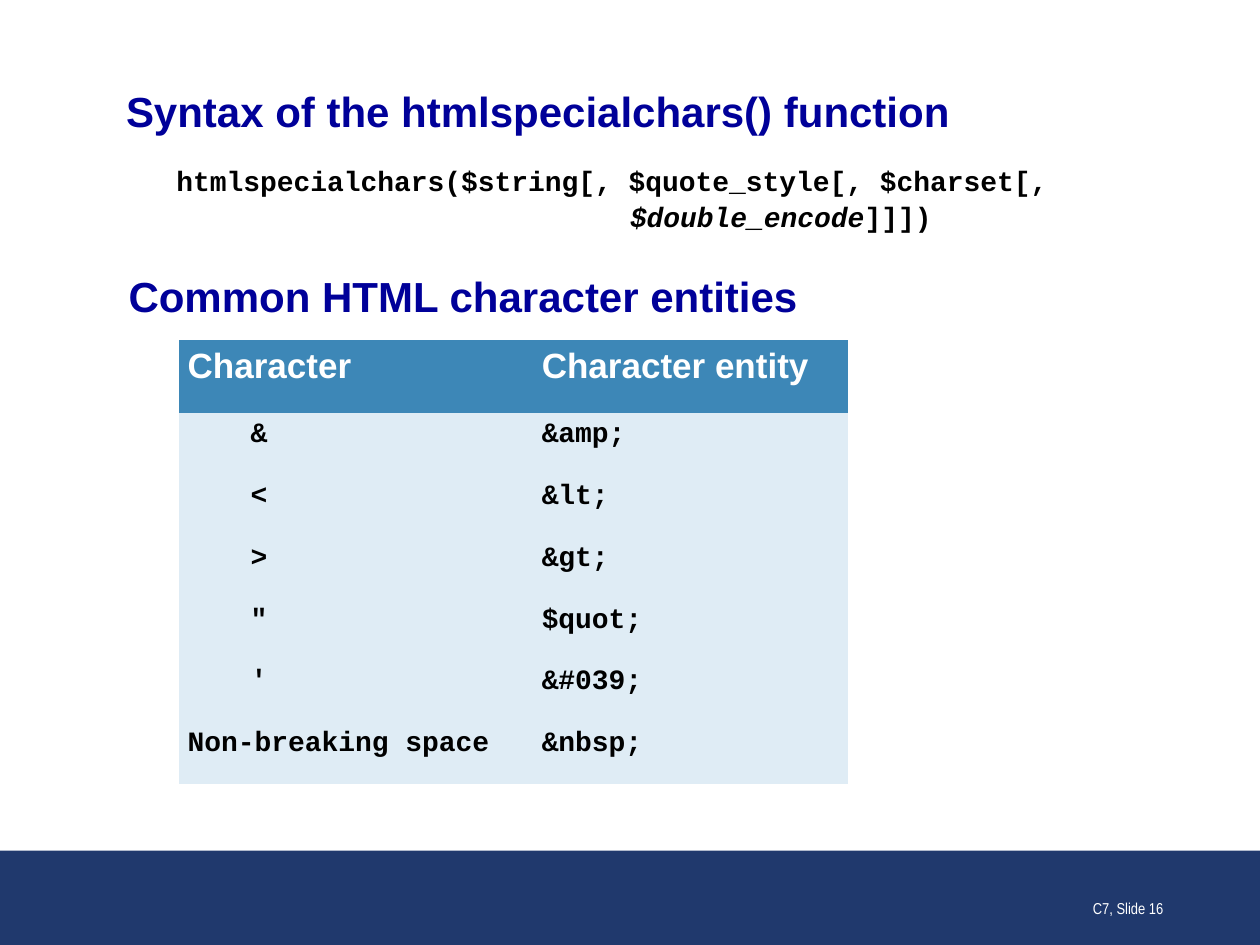
from lxml import etree
from pptx import Presentation
from pptx.dml.color import RGBColor
from pptx.enum.shapes import MSO_SHAPE
from pptx.enum.text import MSO_ANCHOR, MSO_AUTO_SIZE, PP_ALIGN
from pptx.oxml.ns import qn
from pptx.util import Inches, Pt

RECT = MSO_SHAPE.RECTANGLE
MIDDLE, BOTTOM = MSO_ANCHOR.MIDDLE, MSO_ANCHOR.BOTTOM
LEFT, RIGHT = PP_ALIGN.LEFT, PP_ALIGN.RIGHT
NO_FIT = MSO_AUTO_SIZE.NONE
NO_STYLE = "{2D5ABB26-0587-4C30-8999-92F81FD0307C}"
NAVY, BLUE, HEADER, PALE = "20396D", "000099", "3D87B7", "DFECF5"
WHITE, BLACK = "FFFFFF", "000000"
HEADING = ("Arial", 24, BLUE, True)
CODE = ("Courier New", 16, BLACK, True)
TABLE_HEAD = ("Arial", 20, WHITE, True)
FOOTER = ("Arial Narrow", 9, WHITE, False)


def rgb(value):
    """Turn a hex string into a colour."""
    return RGBColor.from_string(value)


class SlideBuilder:
    """Hold the current slide and add styled elements to it."""

    def __init__(self, prs):
        """Start a title and content slide."""
        self.slide = prs.slides.add_slide(prs.slide_layouts[1])

    def place(self, sp, left, top, width, height):
        """Move and size a shape, in inches."""
        sp.left, sp.top = Inches(left), Inches(top)
        sp.width, sp.height = Inches(width), Inches(height)

    def paragraph(self, p, runs, style, before=0, after=0, indent=0, tab=None, align=LEFT):
        """Format a paragraph and fill it with (text, italic) runs."""
        pPr = p._p.get_or_add_pPr()
        pPr.set("marL", str(Inches(indent)))
        pPr.set("indent", "0")
        etree.SubElement(pPr, qn("a:buNone"))
        if tab:
            tabs = etree.SubElement(pPr, qn("a:tabLst"))
            etree.SubElement(tabs, qn("a:tab"), pos=str(Inches(tab)), algn="l")
        p.alignment = align
        p.space_before, p.space_after = Pt(before), Pt(after)
        name, size, color, bold = style
        for text, italic in runs:
            r = p.add_run()
            r.text = text
            r.font.name, r.font.size = name, Pt(size)
            r.font.bold, r.font.italic = bold, italic
            r.font.color.rgb = rgb(color)

    def title(self, text, *box):
        """Fill the title placeholder."""
        sp = self.slide.shapes.title
        self.place(sp, *box)
        tf = sp.text_frame
        tf.auto_size, tf.vertical_anchor = NO_FIT, MIDDLE
        tf.margin_left = tf.margin_right = tf.margin_top = tf.margin_bottom = 0
        self.paragraph(tf.paragraphs[0], [(text, False)], HEADING, after=6)

    def body(self, paragraphs, *box):
        """Fill the body placeholder with (runs, style, options) paragraphs."""
        sp = self.slide.placeholders[1]
        self.place(sp, *box)
        tf = sp.text_frame
        tf.auto_size = NO_FIT
        for i, (runs, style, options) in enumerate(paragraphs):
            p = tf.add_paragraph() if i else tf.paragraphs[0]
            self.paragraph(p, runs, style, **options)

    def band(self, color, *box):
        """Add a plain filled rectangle."""
        sp = self.slide.shapes.add_shape(RECT, *map(Inches, box))
        sp.shadow.inherit = False
        sp.fill.solid()
        sp.fill.fore_color.rgb = rgb(color)
        sp.line.fill.background()

    def footer(self, text, *box):
        """Add a right-aligned footer text."""
        tf = self.slide.shapes.add_textbox(*map(Inches, box)).text_frame
        tf.word_wrap, tf.vertical_anchor = True, BOTTOM
        self.paragraph(tf.paragraphs[0], [(text, False)], FOOTER, align=RIGHT)

    def table(self, rows, left, top, widths, head_height, row_height):
        """Add a table with a coloured header row."""
        height = head_height + row_height * (len(rows) - 1)
        frame = self.slide.shapes.add_table(
            len(rows), len(widths), Inches(left), Inches(top),
            Inches(sum(widths)), Inches(height))
        tbl = frame.table
        tbl.first_row = tbl.horz_banding = False
        tbl._tbl.tblPr.find(qn("a:tableStyleId")).text = NO_STYLE
        for column, width in zip(tbl.columns, widths):
            column.width = Inches(width)
        for i, row in enumerate(rows):
            tbl.rows[i].height = Inches(row_height if i else head_height)
            for j, text in enumerate(row):
                cell = tbl.cell(i, j)
                cell.margin_left = cell.margin_right = Inches(0.07)
                cell.margin_top = cell.margin_bottom = Inches(0.05)
                cell.fill.solid()
                cell.fill.fore_color.rgb = rgb(PALE if i else HEADER)
                self.paragraph(cell.text_frame.paragraphs[0], [(text, False)],
                               CODE if i else TABLE_HEAD, after=6, tab=1)


def main():
    """Build the slide and save it."""
    prs = Presentation()
    prs.slide_width, prs.slide_height = Inches(10), Inches(7.5)
    s = SlideBuilder(prs)
    s.band(NAVY, 0, 6.75, 10, 0.75)
    s.title("Syntax of the htmlspecialchars() function", 1, 0.68, 8, 0.4)
    s.body([
        ([("htmlspecialchars($string[, $quote_style[, $charset[,", False)],
         CODE, {"indent": 0.38}),
        ([("$double_encode", True), ("]]])", False)],
         CODE, {"indent": 3.98, "before": 1.5, "after": 6}),
        ([("Common HTML character entities", False)],
         HEADING, {"before": 15, "after": 6}),
    ], 0.92, 1.25, 8.08, 2.42)
    s.table([
        ("Character", "Character entity"),
        ("\t&", "&amp;"),
        ("\t<", "&lt;"),
        ("\t>", "&gt;"),
        ("\t\"", "$quot;"),
        ("\t'", "&#039;"),
        ("Non-breaking space", "&nbsp;"),
    ], 1.42, 2.7, (2.81, 2.5), 0.58, 0.49)
    s.footer("C7, Slide 16", 7.25, 6.83, 2.08, 0.5)
    prs.save("out.pptx")


if __name__ == "__main__":
    main()
